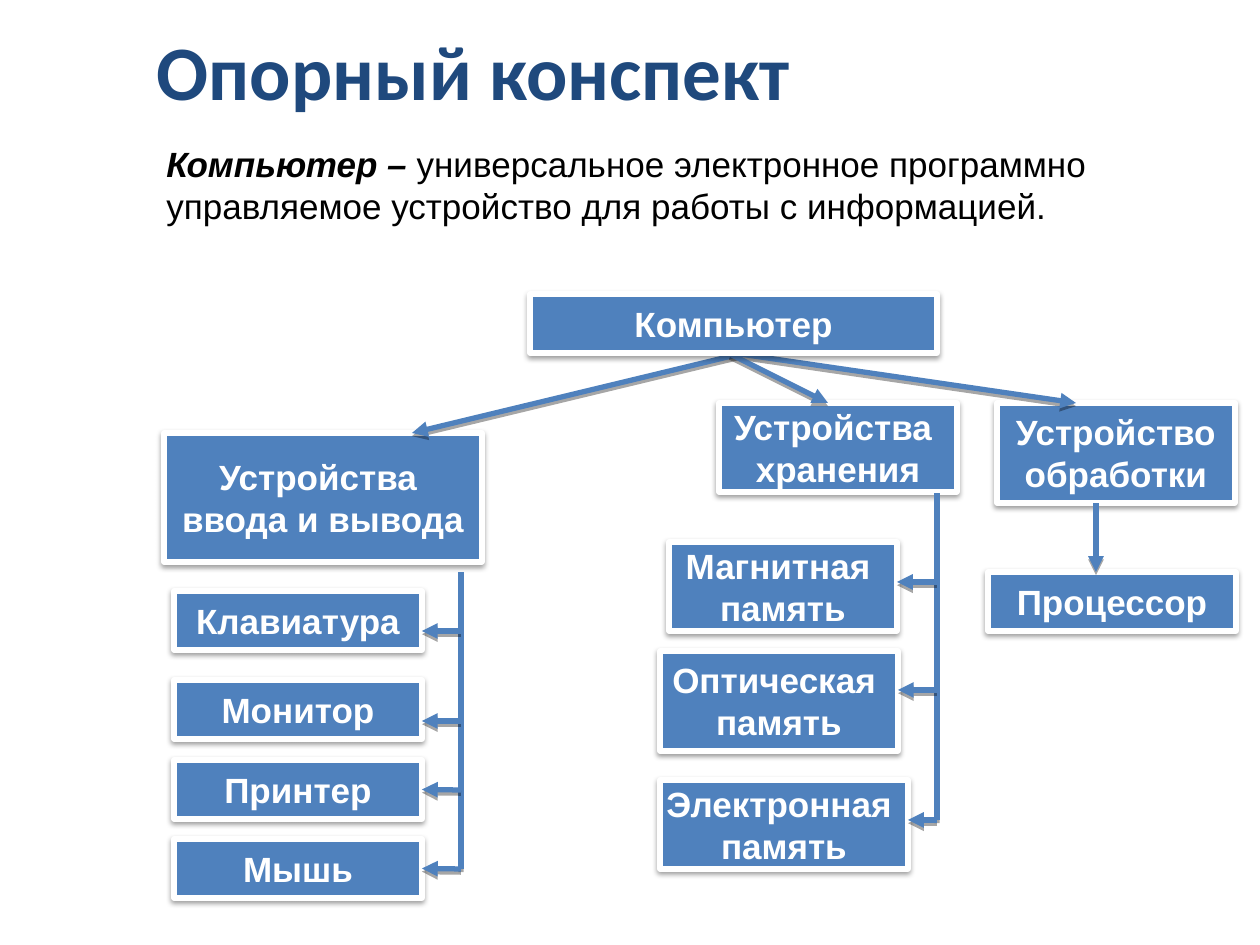
from lxml import etree
from pptx import Presentation
from pptx import util as u
from pptx.dml.color import RGBColor
from pptx.enum import shapes, text
from pptx.oxml.ns import qn

PX = 914400 / 126
BLUE, NAVY, WHITE, BLACK = "4F81BD", "1F497D", "FFFFFF", "000000"

TITLE = "Опорный конспект"
TERM = [
    [("Компьютер – ", True), ("универсальное электронное программно", False)],
    [("управляемое устройство для работы с информацией.", False)],
]
GROUPS = [
    (["Устройства ", "хранения"], (719, 403, 238, 89)),
    (["Устройство", "обработки"], (997, 403, 238, 100)),
    (["Устройства ", "ввода и вывода"], (164, 433, 318, 129)),
    (["Процессор"], (988, 572, 248, 59)),
]
ROOT = (["Компьютер"], (530, 294, 407, 59))
ARROWS = [
    ((412, 433), (740, 354)),
    ((1076, 403), (740, 354)),
    ((828, 403), (730, 354)),
    ((1096, 572), (1096, 503)),
]
TREES = [
    (937, 493, [
        (["Магнитная ", "память"], (669, 542, 228, 89), 582),
        (["Оптическая ", "память"], (660, 651, 238, 100), 690),
        (["Электронная ", "память"], (660, 780, 248, 89), 820),
    ]),
    (461, 572, [
        (["Клавиатура"], (174, 591, 248, 59), 631),
        (["Монитор"], (174, 680, 248, 59), 721),
        (["Принтер"], (174, 760, 248, 59), 790),
        (["Мышь"], (174, 839, 248, 59), 869),
    ]),
]


def px(*nums):
    return [u.Emu(round(n * PX)) for n in nums]


def rgb(code):
    return RGBColor.from_string(code)


def shade(list_, blur, dist, alpha):
    drop = etree.SubElement(list_, qn("a:outerShdw"), blurRad=str(u.Pt(blur)),
                            dist=str(u.Pt(dist)), dir="5400000", rotWithShape="0")
    tint = etree.SubElement(drop, qn("a:srgbClr"), val=BLACK)
    etree.SubElement(tint, qn("a:alpha"), val=str(alpha * 1000))


def write(par, words, size, name, color, bold=True, slant=False):
    run = par.add_run()
    run.text = words
    font = run.font
    font.size, font.name, font.bold, font.italic = u.Pt(size), name, bold, slant
    font.color.rgb = rgb(color)


def rect(slide, place, fill, lines, color, align):
    box = slide.shapes.add_shape(shapes.MSO_SHAPE.RECTANGLE, *px(*place))
    box.shadow.inherit = False
    box.fill.solid()
    box.fill.fore_color.rgb = rgb(fill)
    frame = box.text_frame
    frame.word_wrap = False
    frame.vertical_anchor = text.MSO_ANCHOR.MIDDLE
    for i, runs in enumerate(lines):
        par = frame.add_paragraph() if i else frame.paragraphs[0]
        par.alignment = align
        for words, bold, slant in runs:
            write(par, words, 20, "Arial", color, bold, slant)
    return box


def node(slide, lines, place):
    runs = [[(line, True, False)] for line in lines]
    box = rect(slide, place, BLUE, runs, WHITE, text.PP_ALIGN.CENTER)
    box.line.color.rgb = rgb(WHITE)
    box.line.width = u.Pt(3)
    shade(box._element.spPr.find(qn("a:effectLst")), 3.1, 1.6, 38)
    return box


def link(slide, start, end, head=True):
    line = slide.shapes.add_connector(shapes.MSO_CONNECTOR.STRAIGHT, *px(*start, *end))
    line.line.color.rgb = rgb(BLUE)
    line.line.width = u.Pt(3)
    if head:
        etree.SubElement(line.line._get_or_add_ln(), qn("a:headEnd"), type="triangle")
    shade(etree.SubElement(line._element.spPr, qn("a:effectLst")), 0, 1.8, 35)
    return line


def tree(slide, trunk, top, leaves):
    boxes = [node(slide, lines, place) for lines, place, _ in leaves]
    link(slide, (trunk, leaves[-1][2]), (trunk, top), False)
    for box, (_, (x, y, w, h), mid) in zip(boxes, leaves):
        line = link(slide, (x + w, mid), (trunk, mid))
        if abs(y + h / 2 - mid) < 1:
            line.begin_connect(box, 3)


def main():
    deck = Presentation()
    deck.slide_width, deck.slide_height = u.Inches(10), u.Inches(7.5)
    slide = deck.slides.add_slide(deck.slide_layouts[5])
    title = slide.shapes.title
    title.left, title.top, title.width, title.height = px(144, 26, 1053, 87)
    frame = title.text_frame
    frame.auto_size = text.MSO_AUTO_SIZE.NONE
    frame.vertical_anchor = text.MSO_ANCHOR.MIDDLE
    frame.paragraphs[0].alignment = text.PP_ALIGN.LEFT
    write(frame.paragraphs[0], TITLE, 44, "Calibri", NAVY)

    lines = [[(words, key, key) for words, key in runs] for runs in TERM]
    term = rect(slide, (154, 125, 1072, 118), WHITE, lines, BLACK, text.PP_ALIGN.LEFT)
    term.line.fill.background()

    for lines, place in GROUPS:
        node(slide, lines, place)
    for start, end in ARROWS:
        link(slide, start, end)
    for trunk, top, leaves in TREES:
        tree(slide, trunk, top, leaves)
    node(slide, *ROOT)
    deck.save("out.pptx")


if __name__ == "__main__":
    main()
